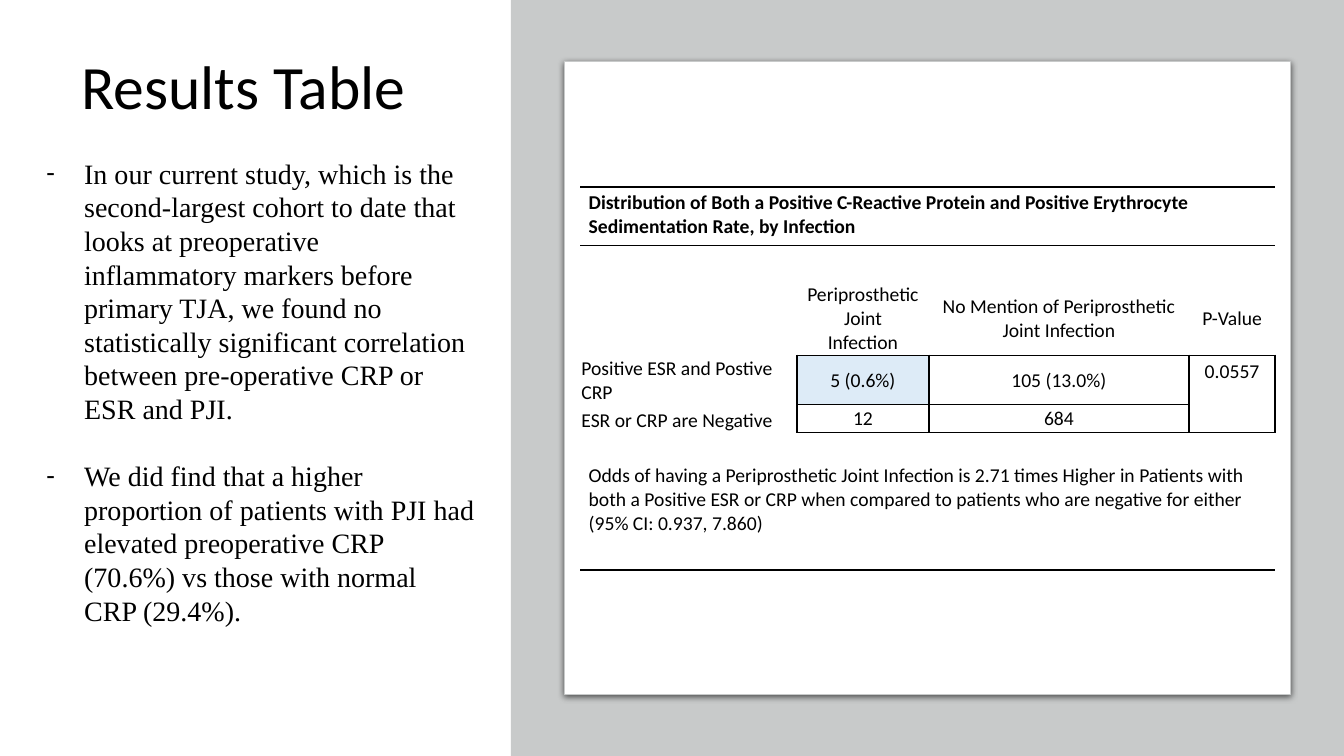
"""Build the results table slide with its summary text."""
from dataclasses import dataclass

from lxml import etree
from pptx import Presentation
from pptx import util as u
from pptx.dml.color import RGBColor
from pptx.enum import shapes, text
from pptx.oxml.ns import qn

Pt = u.Pt
COLORS = {"ink": "000000", "panel": "C8CACA", "card": "FFFFFF", "highlight": "DDEBF7"}
TITLE = {"name": "Calibri", "size": Pt(44)}
BODY = {"name": "Times New Roman", "size": Pt(20)}
CELL = {"name": "Calibri", "size": Pt(14), "bold": False}
HEADING = CELL | {"bold": True}
WIDE, TIGHT = (6, 3, 6, 3), (0.75, 0.75, 0.75, 0)
MIDDLE, TOP, BOTTOM = text.MSO_ANCHOR.MIDDLE, text.MSO_ANCHOR.TOP, text.MSO_ANCHOR.BOTTOM
CENTER, LEFT = text.PP_ALIGN.CENTER, text.PP_ALIGN.LEFT
COLS = (154.8, 94.2, 185.8, 61.6)
ROWS = (42, 25, 53.5, 35, 20, 19.5, 58.5, 20)
FINDINGS = (
    "In our current study, which is the second-largest cohort to date that looks at "
    "preoperative inflammatory markers before primary TJA, we found no statistically "
    "significant correlation between pre-operative CRP or ESR and PJI.",
    "We did find that a higher proportion of patients with PJI had elevated preoperative "
    "CRP (70.6%) vs those with normal CRP (29.4%).",
)


@dataclass
class Panel:
    kind: shapes.MSO_SHAPE
    box: tuple[float, float, float, float]
    fill: str
    line: str | None = None
    shadow: bool = False


@dataclass
class Entry:
    row: int
    col: int
    words: str
    align: text.PP_ALIGN = CENTER
    anchor: text.MSO_ANCHOR = MIDDLE
    margins: tuple[float, ...] = TIGHT
    fill: str | None = None
    bold: bool = False


PANELS = (
    Panel(shapes.MSO_SHAPE.RECTANGLE, (365, 0, 595, 540), "panel"),
    Panel(shapes.MSO_SHAPE.ROUNDED_RECTANGLE, (403.2, 44, 518.4, 452), "card", "panel", True),
)
ENTRIES = (
    Entry(0, 0, "Distribution of Both a Positive C-Reactive Protein and Positive Erythrocyte "
          "Sedimentation Rate, by Infection", LEFT, TOP, WIDE, bold=True),
    Entry(2, 1, "Periprosthetic Joint\nInfection"),
    Entry(2, 2, "No Mention of Periprosthetic Joint Infection"),
    Entry(2, 3, "P-Value"),
    Entry(3, 0, "Positive ESR and Postive CRP", LEFT, BOTTOM),
    Entry(3, 1, "5 (0.6%)", fill="highlight"),
    Entry(3, 2, "105 (13.0%)"),
    Entry(3, 3, "0.0557", CENTER, TOP, WIDE),
    Entry(4, 0, "ESR or CRP are Negative", LEFT, BOTTOM),
    Entry(4, 1, "12"),
    Entry(4, 2, "684"),
    Entry(6, 0, "Odds of having a Periprosthetic Joint Infection is 2.71 times Higher in "
          "Patients with both a Positive ESR or CRP when compared to patients who are "
          "negative for either (95% CI: 0.937, 7.860)", LEFT, TOP, WIDE),
)
MERGES = (((0, 0), (0, 3)), ((1, 1), (1, 2)), ((3, 3), (4, 3)), ((6, 0), (6, 3)))


def rgb(name: str) -> RGBColor:
    return RGBColor.from_string(COLORS[name])


def set_all(target, values: dict) -> None:
    for name, value in values.items():
        setattr(target, name, value)


def add_run(p, words: str, fmt: dict) -> None:
    for i, part in enumerate(words.split("\n")):
        if i:
            p.add_line_break()
        r = p.add_run()
        r.text = part
        set_all(r.font, fmt)
        r.font.color.rgb = rgb("ink")


def add_text(s, box: tuple, anchor, autosize):
    tf = s.shapes.add_textbox(*map(Pt, box)).text_frame
    set_all(tf, {"word_wrap": True, "vertical_anchor": anchor, "auto_size": autosize})
    return tf


def add_panel(s, panel: Panel) -> None:
    sp = s.shapes.add_shape(panel.kind, *map(Pt, panel.box))
    sp.shadow.inherit = False
    sp.fill.solid()
    sp.fill.fore_color.rgb = rgb(panel.fill)
    if len(sp.adjustments):
        sp.adjustments[0] = 0
    if panel.line:
        sp.line.color.rgb = rgb(panel.line)
        sp.line.width = Pt(0.75)
    else:
        sp.line.fill.background()
    if panel.shadow:
        effects = sp._element.spPr.find(qn("a:effectLst"))
        shade = etree.SubElement(effects, qn("a:outerShdw"), blurRad=str(Pt(4.5)),
                                 dist=str(Pt(1.5)), dir="5400000", algn="t", rotWithShape="0")
        color = etree.SubElement(shade, qn("a:srgbClr"), val=COLORS["ink"])
        etree.SubElement(color, qn("a:alpha"), val="63000")


def cell_borders(row: int, col: int) -> dict[str, float]:
    if row in (3, 4):
        sides = "R" if col == 0 else "LRB" if (row, col) == (4, 3) else "LRTB"
        return dict.fromkeys(sides, 1.5)
    boxed = 1.5 if col else 0
    return {0: {"T": 1.5, "B": 0.5}, 1: {"T": 0.5}, 2: {"B": boxed},
            5: {"T": boxed}, 7: {"B": 1.5}}.get(row, {})


def draw_borders(cell, widths: dict[str, float]) -> None:
    tcPr = cell._tc.get_or_add_tcPr()
    for i, side in enumerate("LRTB"):
        width = widths.get(side, 0)
        ln = etree.Element(qn(f"a:ln{side}"), w=str(Pt(width)))
        if width:
            fill = etree.SubElement(ln, qn("a:solidFill"))
            etree.SubElement(fill, qn("a:srgbClr"), val=COLORS["ink"])
        else:
            etree.SubElement(ln, qn("a:noFill"))
        tcPr.insert(i, ln)


def fill_cell(cell, entry: Entry | None) -> None:
    margins = entry.margins if entry else (0, 0, 0, 0)
    sides = ("margin_left", "margin_top", "margin_right", "margin_bottom")
    set_all(cell, dict(zip(sides, map(Pt, margins))))
    p = cell.text_frame.paragraphs[0]
    if entry:
        cell.vertical_anchor = entry.anchor
        p.alignment = entry.align
        add_run(p, entry.words, HEADING if entry.bold else CELL)
    else:
        etree.SubElement(p._p, qn("a:endParaRPr"), sz="800")
    if entry and entry.fill:
        cell.fill.solid()
        cell.fill.fore_color.rgb = rgb(entry.fill)
    else:
        cell.fill.background()


def add_results(s) -> None:
    box = (414.5, 133.5, sum(COLS), sum(ROWS))
    tbl = s.shapes.add_table(len(ROWS), len(COLS), *map(Pt, box)).table
    set_all(tbl, {"first_row": False, "horz_banding": False})
    for column, width in zip(tbl.columns, COLS):
        column.width = Pt(width)
    for row, height in zip(tbl.rows, ROWS):
        row.height = Pt(height)
    for start, end in MERGES:
        tbl.cell(*start).merge(tbl.cell(*end))
    entries = {(e.row, e.col): e for e in ENTRIES}
    for row in range(len(ROWS)):
        for col in range(len(COLS)):
            cell = tbl.cell(row, col)
            fill_cell(cell, entries.get((row, col)))
            draw_borders(cell, cell_borders(row, col))


def add_findings(s) -> None:
    tf = add_text(s, (26, 108, 320.4, 368.6), TOP, text.MSO_AUTO_SIZE.SHAPE_TO_FIT_TEXT)
    for i, words in enumerate(FINDINGS):
        p = tf.add_paragraph() if i else tf.paragraphs[0]
        pPr = p._p.get_or_add_pPr()
        pPr.set("marL", str(Pt(27)))
        pPr.set("indent", str(-Pt(27)))
        etree.SubElement(pPr, qn("a:buFont"), typeface="Calibri")
        etree.SubElement(pPr, qn("a:buChar"), char="-")
        p.line_spacing = Pt(24)
        if i:
            p.space_before = Pt(24)
        add_run(p, words, BODY)


def main() -> None:
    prs = Presentation()
    set_all(prs, {"slide_width": Pt(960), "slide_height": Pt(540)})
    s = prs.slides.add_slide(prs.slide_layouts[6])
    p = add_text(s, (51, 0, 276, 127.5), MIDDLE, text.MSO_AUTO_SIZE.NONE).paragraphs[0]
    set_all(p, {"line_spacing": 0.9, "space_after": Pt(6)})
    add_run(p, "Results Table", TITLE)
    for panel in PANELS:
        add_panel(s, panel)
    add_results(s)
    add_findings(s)
    prs.save("out.pptx")


if __name__ == "__main__":
    main()
